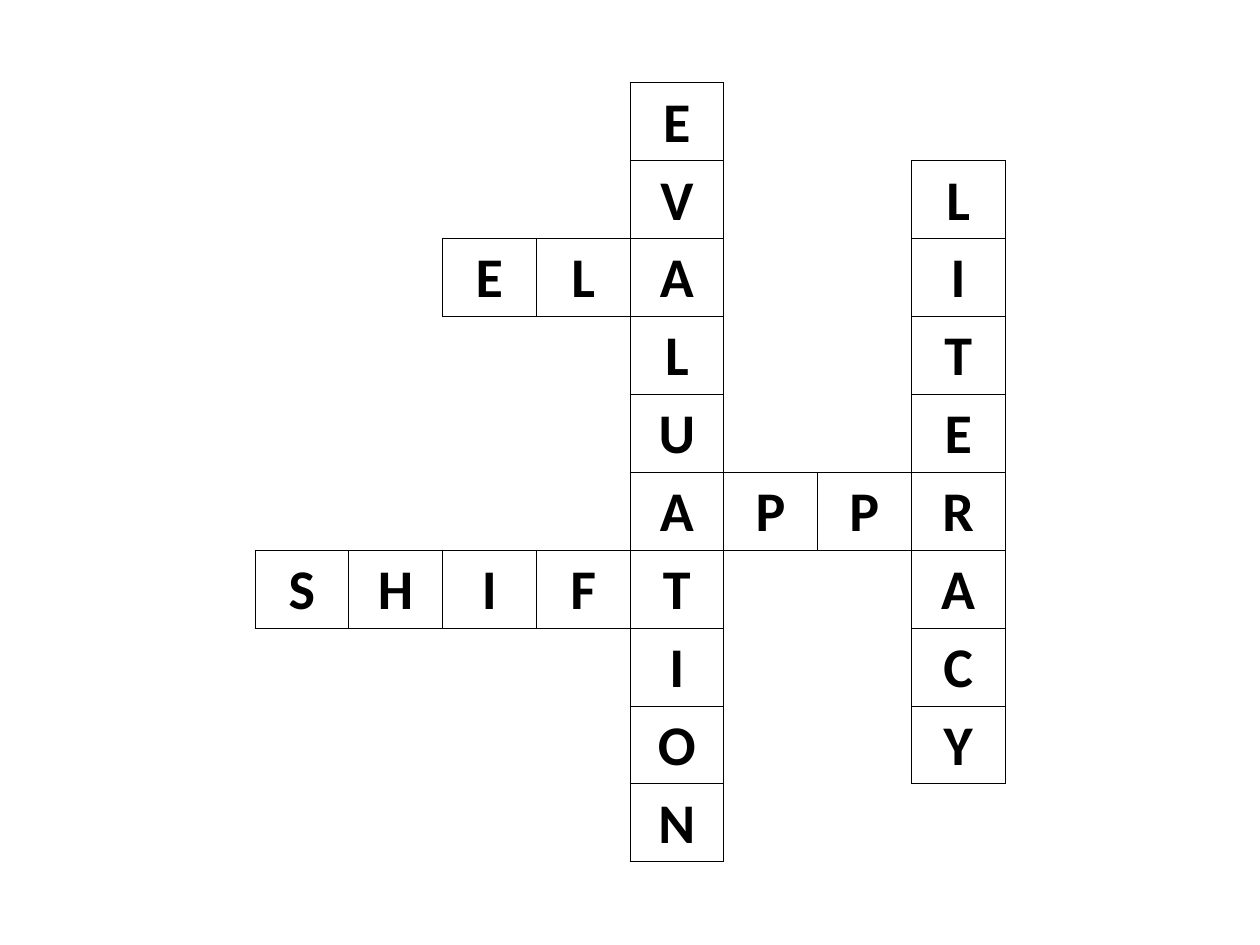
from lxml.etree import SubElement
from pptx import Presentation
from pptx.dml.color import RGBColor
from pptx.enum.text import MSO_ANCHOR as Anchor, PP_ALIGN as Align
from pptx.oxml.ns import qn
from pptx.util import Cm, Pt

COLORS = {"ink": "000000"}
ROWS, COLUMNS = 10, 8
CELL_WIDTH, CELL_HEIGHT = 1.89, 1.57
LEFT, TOP = 5.14, 1.67
ACROSS, DOWN = (0, 1), (1, 0)
WORDS = [
    ("EVALUATION", 0, 4, DOWN),
    ("LITERACY", 1, 7, DOWN),
    ("ELA", 2, 2, ACROSS),
    ("APPR", 5, 4, ACROSS),
    ("SHIFT", 6, 0, ACROSS),
]
SIDES = {"a:lnL": (0, -1), "a:lnR": (0, 1), "a:lnT": (-1, 0), "a:lnB": (1, 0)}


class Crossword:
    font = "Calibri"
    size = Pt(32)
    line = Pt(0.5)

    def __init__(self, page):
        self.page = page

    def grid(self, letters):
        frame = self.page.shapes.add_table(
            ROWS, COLUMNS, Cm(LEFT), Cm(TOP),
            Cm(CELL_WIDTH * COLUMNS), Cm(CELL_HEIGHT * ROWS))
        table = frame.table
        table.first_row = table.horz_banding = False
        for column in table.columns:
            column.width = Cm(CELL_WIDTH)
        for row in table.rows:
            row.height = Cm(CELL_HEIGHT)
        for row in range(ROWS):
            for column in range(COLUMNS):
                cell = table.cell(row, column)
                self.borders(cell, row, column, letters)
                cell.fill.background()
                if (row, column) in letters:
                    self.letter(cell, letters[row, column])

    def borders(self, cell, row, column, letters):
        properties = cell._tc.get_or_add_tcPr()
        for tag, (down, right) in SIDES.items():
            edge = SubElement(properties, qn(tag), w=str(self.line))
            if (row, column) in letters or (row + down, column + right) in letters:
                fill = SubElement(edge, qn("a:solidFill"))
                SubElement(fill, qn("a:srgbClr"), val=COLORS["ink"])
            else:
                SubElement(edge, qn("a:noFill"))

    def letter(self, cell, text):
        cell.vertical_anchor = Anchor.MIDDLE
        cell.margin_left = cell.margin_right = cell.margin_top = Cm(0.05)
        cell.margin_bottom = 0
        para = cell.text_frame.paragraphs[0]
        para.alignment = Align.CENTER
        span = para.add_run()
        span.text = text
        span.font.name = self.font
        span.font.size = self.size
        span.font.bold = True
        span.font.color.rgb = RGBColor.from_string(COLORS["ink"])


def place(words):
    return {
        (row + down * step, column + right * step): letter
        for word, row, column, (down, right) in words
        for step, letter in enumerate(word)
    }


def main():
    deck = Presentation()
    deck.slide_width, deck.slide_height = Cm(25.4), Cm(19.05)
    page = deck.slides.add_slide(deck.slide_layouts[6])
    Crossword(page).grid(place(WORDS))
    deck.save("out.pptx")


if __name__ == "__main__":
    main()
